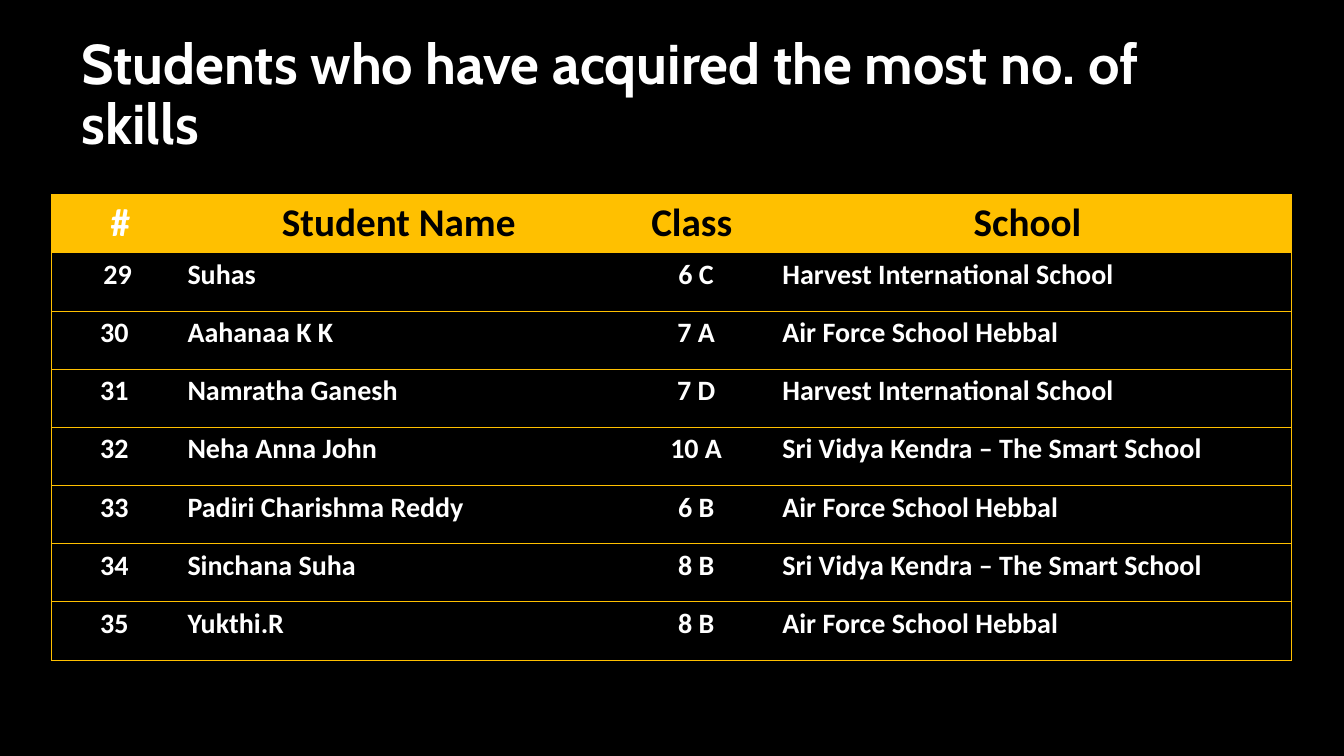
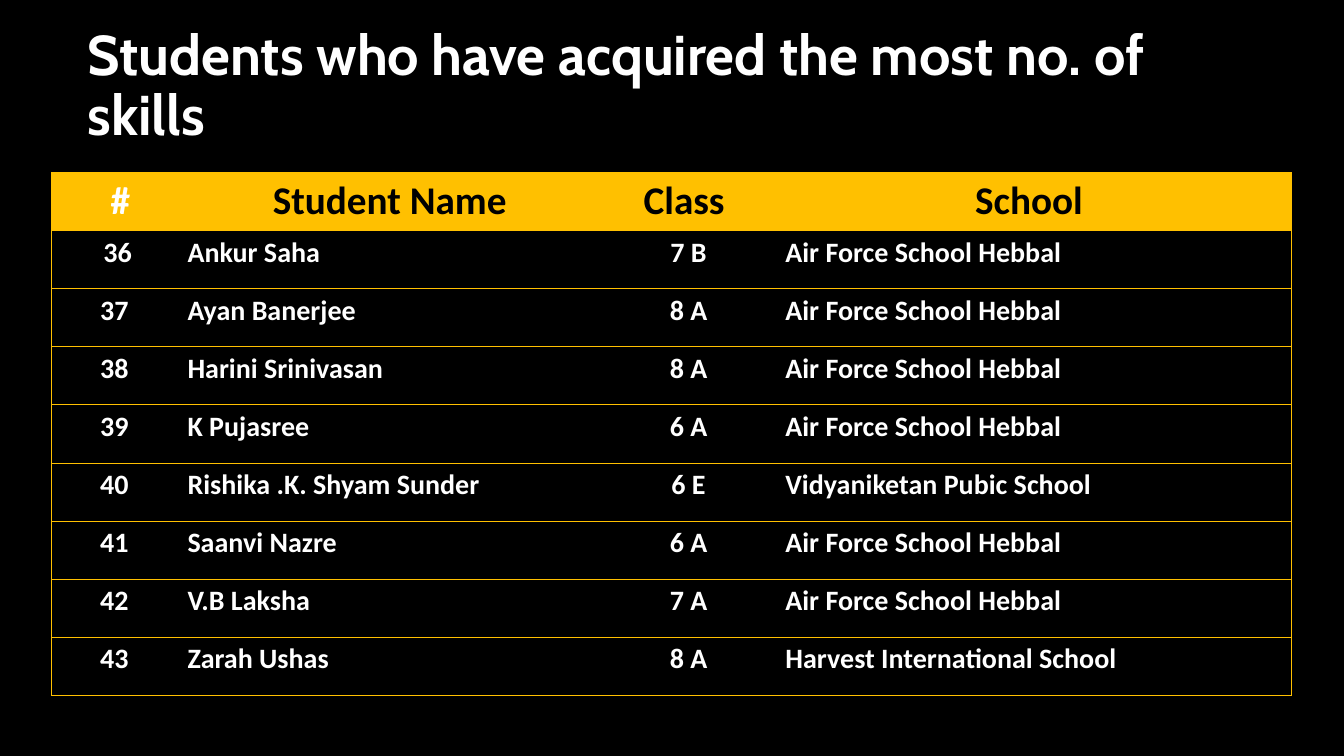
"""Builds the slides that list the students with the most skills."""
from pptx import Presentation, util as u
from pptx.dml.color import RGBColor
from pptx.enum import text
from pptx.oxml import parse_xml
from pptx.oxml.ns import nsdecls

HUES = {"back": "000000", "ink": "FFFFFF", "gold": "FFC000", "dark": "000000"}
TITLE = "Students who have acquired the most no. of skills"
HEADS = ["#", " Student Name ", "Class ", "School "]
AIR = "Air Force School Hebbal"
HARVEST = "Harvest International School"
SMART = "Sri Vidya Kendra – The Smart School"

PAGES = [
    {
        "title": (0.71, 0.23, 11.91, 1.45),
        "table": (0.51, 1.93, 12.31, 4.62),
        "cols": (1.25, 4.39, 1.51, 5.15),
        "rows": [
            (" 29", "Suhas", "6 C", HARVEST),
            ("30", "Aahanaa K K", "7 A", AIR),
            ("31", "Namratha Ganesh", "7 D", HARVEST),
            ("32", "Neha Anna John", "10 A", SMART),
            ("33", "Padiri Charishma Reddy", "6 B", AIR),
            ("34", "Sinchana Suha", "8 B", SMART),
            ("35", "Yukthi.R", "8 B", AIR),
        ],
    },
    {
        "title": (0.77, 0.14, 11.8, 1.45),
        "table": (0.51, 1.71, 12.31, 5.19),
        "cols": (1.25, 4.21, 1.72, 5.12),
        "rows": [
            (" 36", "Ankur Saha", "7 B", AIR),
            ("37", "Ayan Banerjee", "8 A", AIR),
            ("38", "Harini Srinivasan", "8 A", AIR),
            ("39", "K Pujasree", "6 A", AIR),
            ("40", "Rishika .K. Shyam Sunder", "6 E", "Vidyaniketan Pubic School"),
            ("41", "Saanvi Nazre", "6 A", AIR),
            ("42", "V.B Laksha", "7 A", AIR),
            ("43", "Zarah Ushas", "8 A", HARVEST),
        ],
    },
]


def hue(name):
    """Return a named colour."""
    return RGBColor.from_string(HUES[name])


def style(para, face, size, tone):
    """Set the bold font of a paragraph."""
    font = para.font
    font.name, font.size, font.bold = face, u.Pt(size), True
    font.color.rgb = hue(tone)


def add_title(slide, box):
    """Place and format the slide title in its box."""
    title = slide.shapes.title
    title.left, title.top, title.width, title.height = map(u.Inches, box)
    frame = title.text_frame
    frame.text = TITLE
    frame.word_wrap = True
    frame.auto_size = text.MSO_AUTO_SIZE.NONE
    frame.vertical_anchor = text.MSO_ANCHOR.MIDDLE
    para = frame.paragraphs[0]
    para.alignment = text.PP_ALIGN.LEFT
    para.line_spacing = 0.9
    style(para, "Cabin", 40, "ink")


def add_edges(cell, sides):
    """Draw gold lines on the given sides of a cell and clear the others."""
    props = cell._tc.get_or_add_tcPr()
    for side in "LRTB":
        fill = "<a:noFill/>"
        if side in sides:
            fill = f'<a:solidFill><a:srgbClr val="{HUES["gold"]}"/></a:solidFill>'
        props.append(parse_xml(
            f'<a:ln{side} {nsdecls("a")} w="{u.Pt(0.5)}">{fill}</a:ln{side}>'))


def fill_cell(cell, words, col, head):
    """Write and format one cell of the table."""
    add_edges(cell, "TB" + {0: "L", 3: "R"}.get(col, ""))
    cell.fill.solid()
    cell.fill.fore_color.rgb = hue("gold" if head else "back")
    cell.text = words
    para = cell.text_frame.paragraphs[0]
    mid = head or col in (0, 2)
    para.alignment = text.PP_ALIGN.CENTER if mid else text.PP_ALIGN.LEFT
    tone = "dark" if head and col else "ink"
    style(para, "Calibri", 28 if head else 20, tone)
    if head and col == 0:
        cell.margin_left = u.Inches(0.22)


def add_list(slide, box, cols, rows):
    """Place the table of students in its box."""
    lines = [HEADS, *rows]
    table = slide.shapes.add_table(len(lines), len(cols), *map(u.Inches, box)).table
    table.horz_banding = False
    for col, width in zip(table.columns, cols):
        col.width = u.Inches(width)
    for r, line in enumerate(lines):
        table.rows[r].height = u.Inches(box[3] / len(lines))
        for c, words in enumerate(line):
            fill_cell(table.cell(r, c), words, c, r == 0)


def main():
    """Build the deck and save it."""
    deck = Presentation()
    deck.slide_width, deck.slide_height = u.Inches(13.33), u.Inches(7.5)
    back = deck.slide_master.background.fill
    back.solid()
    back.fore_color.rgb = hue("back")
    for page in PAGES:
        slide = deck.slides.add_slide(deck.slide_layouts[5])
        add_title(slide, page["title"])
        add_list(slide, page["table"], page["cols"], page["rows"])
    deck.save("out.pptx")


if __name__ == "__main__":
    main()
